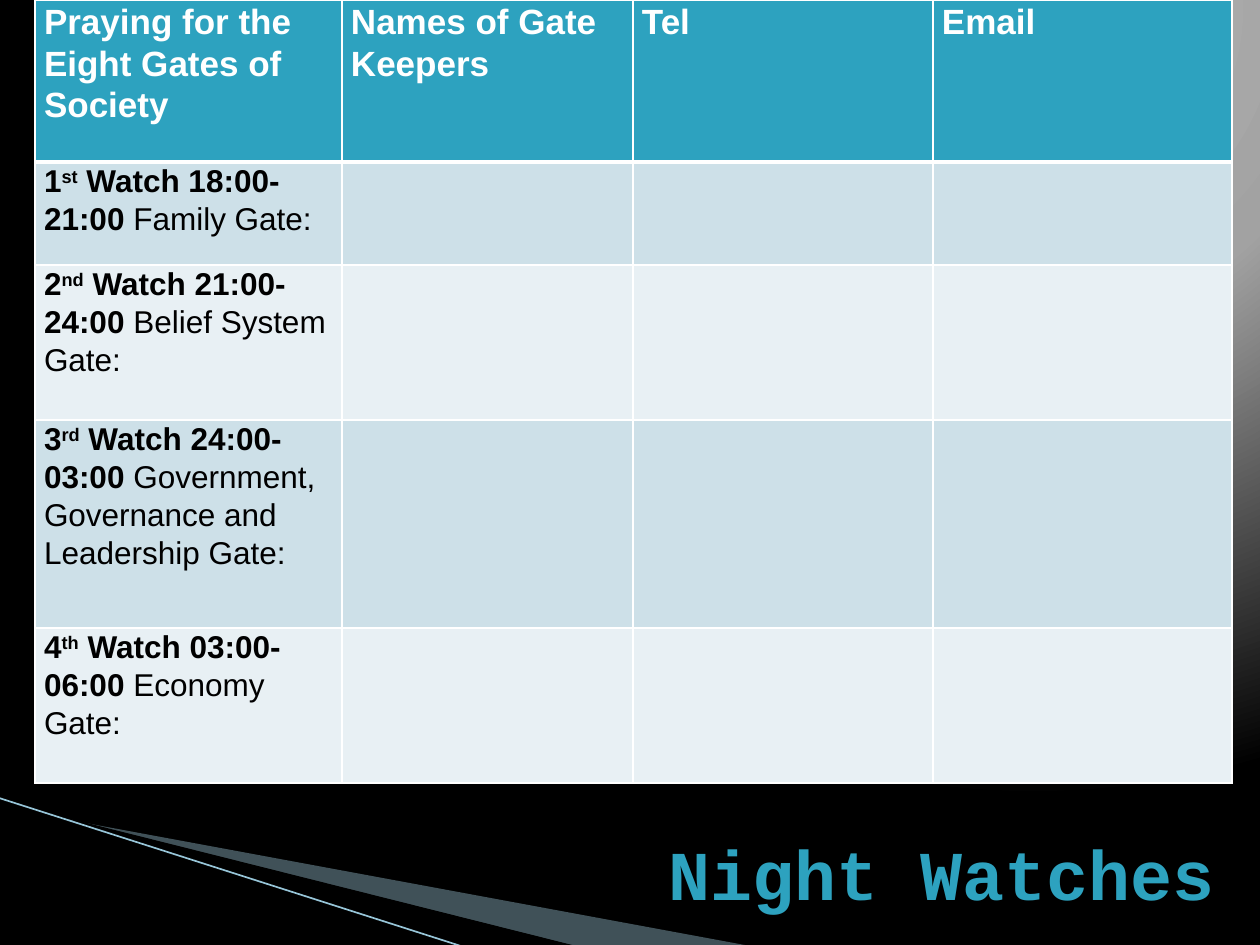
"""Build the Night Watches slide: a table of gates and gate keepers above a title."""
from lxml import etree
from pptx import Presentation
from pptx.dml.color import RGBColor
from pptx.enum.shapes import MSO_CONNECTOR
from pptx.enum.text import MSO_ANCHOR, MSO_AUTO_SIZE, PP_ALIGN
from pptx.oxml import parse_xml
from pptx.oxml.ns import nsdecls, qn
from pptx.util import Emu, Pt

STRAIGHT = MSO_CONNECTOR.STRAIGHT
TOP = MSO_ANCHOR.TOP
NO_FIT = MSO_AUTO_SIZE.NONE
RIGHT = PP_ALIGN.RIGHT
EMU_PER_PX = 914400 / 126

TITLE = "Night Watches"
HEADERS = ["Praying for the Eight Gates of Society", "Names of Gate Keepers", "Tel", "Email"]
WATCHES = [
    ("1", "st", " Watch 18:00-21:00 ", "Family Gate:"),
    ("2", "nd", " Watch 21:00-24:00 ", "Belief System Gate:"),
    ("3", "rd", " Watch 24:00-03:00 ", "Government, Governance and Leadership Gate:"),
    ("4", "th", " Watch 03:00-06:00", " Economy Gate:"),
]
COLUMN_WIDTHS = [307, 291, 300, 299]
ROW_HEIGHTS = [162, 103, 155, 208, 155]
TABLE_LEFT, TABLE_TOP = 35, 0
TEAL, WHITE, BLACK = "2DA2BF", "FFFFFF", "000000"
BANDS = ["CDE0E8", "E8F0F4"]
BACKGROUND_STOPS = [(0, "B4B4B4"), (40, "A2A2A2"), (100, BLACK)]
WEDGES = [
    ([(69, 820), (750, 946), (575, 946), (69, 819)], "A0CBDC", 40),
    ([(67, 818), (576, 946), (469, 948), (68, 819)], BLACK, 100),
]
EDGE_LINE = [(-1, 798), (467, 948)]
HEADER_FONT = {"name": "Arial", "size": Pt(20), "bold": True}
WATCH_FONT = {"name": "Arial", "size": Pt(18), "bold": True}
GATE_FONT = {**WATCH_FONT, "bold": False}
TITLE_FONT = {"name": "Courier New", "size": Pt(40), "bold": True}


def px(value):
    return Emu(round(value * EMU_PER_PX))


def rgb(color):
    return RGBColor.from_string(color)


def set_format(target, values):
    for name, value in values.items():
        setattr(target, name, value)


def add_run(paragraph, text, font, color, baseline=0):
    run = paragraph.add_run()
    run.text = text
    set_format(run.font, font)
    run.font.color.rgb = rgb(color)
    if baseline:
        run.font._element.set("baseline", str(baseline * 1000))


def set_background(slide):
    stops = "".join(
        f'<a:gs pos="{position * 1000}"><a:srgbClr val="{color}"/></a:gs>'
        for position, color in BACKGROUND_STOPS
    )
    slide.background.fill.solid()
    properties = slide.background._cSld.bg.bgPr
    gradient = parse_xml(
        f'<a:gradFill {nsdecls("a")} rotWithShape="1"><a:gsLst>{stops}</a:gsLst>'
        '<a:path path="circle"><a:fillToRect l="65000" t="0" r="0" b="98000"/></a:path></a:gradFill>'
    )
    properties.replace(properties[0], gradient)


def add_wedge(slide, points, color, opacity):
    builder = slide.shapes.build_freeform(*map(px, points[0]))
    builder.add_line_segments([tuple(map(px, point)) for point in points[1:]], close=True)
    shape = builder.convert_to_shape()
    shape.shadow.inherit = False
    shape.fill.solid()
    shape.fill.fore_color.rgb = rgb(color)
    shape.line.fill.background()
    if opacity < 100:
        color_element = shape._element.spPr.find(f".//{qn('a:srgbClr')}")
        etree.SubElement(color_element, qn("a:alpha"), val=str(opacity * 1000))


def add_edge_line(slide):
    start, end = EDGE_LINE
    line = slide.shapes.add_connector(STRAIGHT, *map(px, start + end))
    line.line.color.rgb = rgb("97C5D8")
    line.line.width = Pt(0.95)
    etree.SubElement(line._element.spPr, qn("a:effectLst"))


def format_cell(cell, fill, bottom_width):
    margins = {"margin_left": px(9), "margin_right": px(9), "margin_top": 0, "margin_bottom": 0}
    set_format(cell, margins)
    properties = cell._tc.get_or_add_tcPr()
    for side, width in {"L": 1, "R": 1, "T": 1, "B": bottom_width}.items():
        properties.append(parse_xml(
            f'<a:ln{side} {nsdecls("a")} w="{Pt(width)}"><a:solidFill>'
            f'<a:srgbClr val="{WHITE}"/></a:solidFill></a:ln{side}>'
        ))
    cell.fill.solid()
    cell.fill.fore_color.rgb = rgb(fill)
    cell.text_frame.paragraphs[0].line_spacing = 1.07


def add_watch_table(slide):
    table = slide.shapes.add_table(
        len(ROW_HEIGHTS), len(COLUMN_WIDTHS), px(TABLE_LEFT), px(TABLE_TOP),
        px(sum(COLUMN_WIDTHS)), px(sum(ROW_HEIGHTS)),
    ).table
    for column, width in zip(table.columns, COLUMN_WIDTHS):
        column.width = px(width)
    for index, (row, height) in enumerate(zip(table.rows, ROW_HEIGHTS)):
        row.height = px(height)
        for cell in row.cells:
            format_cell(cell, BANDS[(index - 1) % 2] if index else TEAL, 1 if index else 3)
    for column, header in enumerate(HEADERS):
        add_run(table.cell(0, column).text_frame.paragraphs[0], header, HEADER_FONT, WHITE)
    for row, (number, suffix, hours, gate) in enumerate(WATCHES, 1):
        paragraph = table.cell(row, 0).text_frame.paragraphs[0]
        add_run(paragraph, number, WATCH_FONT, BLACK)
        add_run(paragraph, suffix, WATCH_FONT, BLACK, 30)
        add_run(paragraph, hours, WATCH_FONT, BLACK)
        add_run(paragraph, gate, GATE_FONT, BLACK)


def format_title(slide):
    title = slide.shapes.title
    set_format(title, {"left": px(115), "top": px(810), "width": px(1112), "height": px(78)})
    frame = title.text_frame
    set_format(frame, {"word_wrap": True, "auto_size": NO_FIT, "vertical_anchor": TOP,
                       "margin_top": px(21), "margin_bottom": 0})
    paragraph = frame.paragraphs[0]
    set_format(paragraph, {"alignment": RIGHT, "line_spacing": 1.0})
    add_run(paragraph, TITLE, TITLE_FONT, TEAL)


def main():
    presentation = Presentation()
    set_format(presentation, {"slide_width": px(1260), "slide_height": px(945)})
    slide = presentation.slides.add_slide(presentation.slide_layouts[5])
    set_background(slide)
    for points, color, opacity in WEDGES:
        add_wedge(slide, points, color, opacity)
    add_edge_line(slide)
    add_watch_table(slide)
    format_title(slide)
    presentation.save("out.pptx")


if __name__ == "__main__":
    main()
